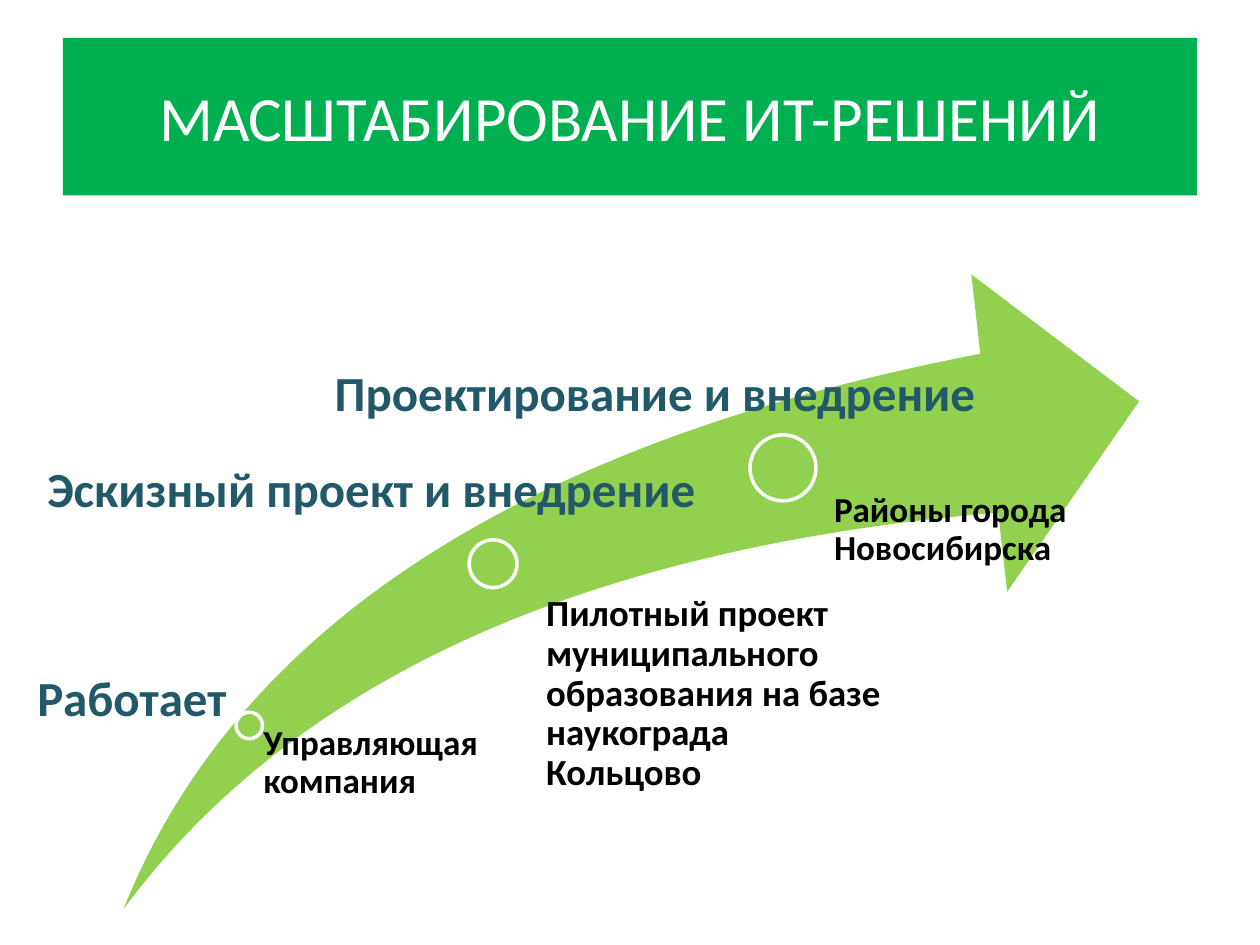
import pptx
import pptx.dml.color
import pptx.enum.shapes
import pptx.enum.text
import pptx.util

Pt = pptx.util.Pt
RGBColor = pptx.dml.color.RGBColor
Shape = pptx.enum.shapes.MSO_SHAPE
Align = pptx.enum.text.PP_ALIGN
Anchor = pptx.enum.text.MSO_ANCHOR
AutoSize = pptx.enum.text.MSO_AUTO_SIZE

WHITE = RGBColor(0xFF, 0xFF, 0xFF)
BLACK = RGBColor(0x00, 0x00, 0x00)
GREEN = RGBColor(0x00, 0xB0, 0x50)
LIME = RGBColor(0x92, 0xD0, 0x50)
TEAL = RGBColor(0x21, 0x59, 0x68)


class GrowthSlide:
    font = "Calibri"

    def __init__(self, deck):
        self.slide = deck.slides.add_slide(deck.slide_layouts[6])

    def shape(self, preset, box, fill, outline=None):
        shape = self.slide.shapes.add_shape(preset, *map(Pt, box))
        shape.shadow.inherit = False
        shape.fill.solid()
        shape.fill.fore_color.rgb = fill
        if outline is None:
            shape.line.fill.background()
        else:
            shape.line.color.rgb = outline
            shape.line.width = Pt(2)
        return shape

    def add_text(self, paragraph, text, size, color, bold=False):
        run = paragraph.add_run()
        run.text = text
        run.font.name = self.font
        run.font.size = Pt(size)
        run.font.bold = bold
        run.font.color.rgb = color

    def title(self, box, text):
        frame = self.shape(Shape.RECTANGLE, box, GREEN).text_frame
        frame.word_wrap = True
        frame.vertical_anchor = Anchor.MIDDLE
        frame.paragraphs[0].alignment = Align.CENTER
        self.add_text(frame.paragraphs[0], text, 36, WHITE)

    def arrow(self, box):
        swoosh = self.shape(Shape.SWOOSH_ARROW, box, LIME)
        swoosh.adjustments[0] = swoosh.adjustments[1] = 0.25

    def milestone(self, left, top, diameter):
        self.shape(Shape.OVAL, (left, top, diameter, diameter), LIME, WHITE)

    def place(self, box, inset, text, size):
        """Wrapped description of where a stage takes place."""
        frame = self.slide.shapes.add_textbox(*map(Pt, box)).text_frame
        frame.word_wrap = True
        frame.margin_left = Pt(inset)
        frame.margin_top = frame.margin_right = frame.margin_bottom = Pt(0)
        frame.paragraphs[0].line_spacing = 0.9
        self.add_text(frame.paragraphs[0], text, size, BLACK, bold=True)

    def status(self, left, top, width, text):
        """One-line label that tells how far a stage has come."""
        box = (left, top, width, 41.2)
        frame = self.slide.shapes.add_textbox(*map(Pt, box)).text_frame
        frame.word_wrap = False
        frame.auto_size = AutoSize.SHAPE_TO_FIT_TEXT
        self.add_text(frame.paragraphs[0], text, 28, TEAL, bold=True)


def main():
    deck = pptx.Presentation()
    deck.slide_width, deck.slide_height = Pt(720), Pt(540)

    growth = GrowthSlide(deck)
    growth.title((36, 21.6, 648, 90), "МАСШТАБИРОВАНИЕ ИТ-РЕШЕНИЙ")
    growth.arrow((70.5, 156.8, 580.4, 362.8))

    for milestone in ((134.9, 407, 15.1), (268.1, 308.5, 27.3), (428.6, 248.5, 37.7)):
        growth.milestone(*milestone)

    growth.place((142.5, 414.6, 135.4, 105), 8, "Управляющая компания", 20)
    growth.place((292.3, 340, 211.7, 158.4), 19.8,
                 "Пилотный проект муниципального образования на базе наукограда Кольцово", 21)
    growth.place((462.2, 281.5, 178, 87.8), 14.4, "Районы города Новосибирска", 20)

    growth.status(14.2, 378, 123.8, "Работает")
    growth.status(20, 258.5, 388.8, "Эскизный проект и внедрение")
    growth.status(184.2, 203.8, 384.5, "Проектирование и внедрение")

    deck.save("out.pptx")


if __name__ == "__main__":
    main()
